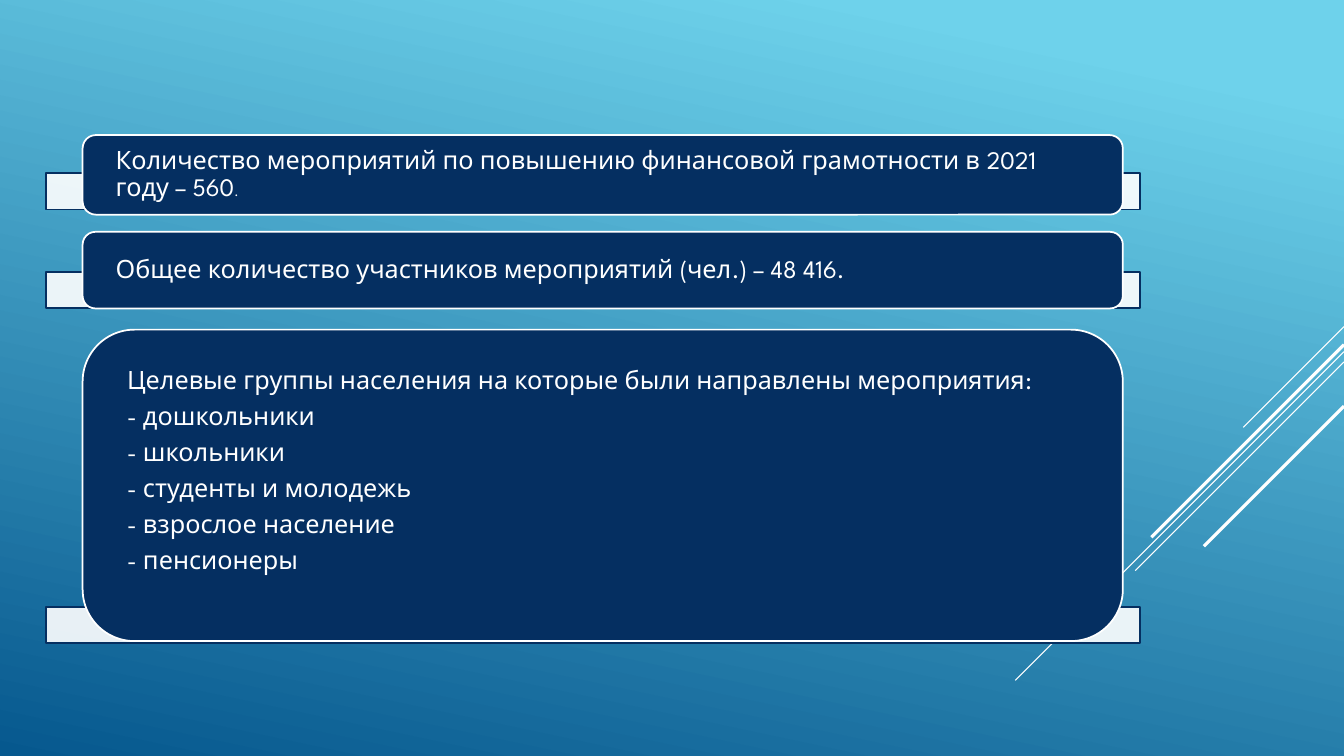
from dataclasses import dataclass

from lxml.etree import SubElement
from pptx import Presentation
from pptx.dml.color import RGBColor
from pptx.enum.shapes import MSO_CONNECTOR, MSO_SHAPE
from pptx.enum.text import MSO_ANCHOR, PP_ALIGN
from pptx.oxml.ns import qn
from pptx.util import Inches, Pt

WIDTH, HEIGHT = Inches(13.33), Inches(7.5)
COLUMN, ROW = WIDTH / 100, HEIGHT / 100


@dataclass(frozen=True)
class Theme:
    navy: RGBColor = RGBColor.from_string("052F61")
    white: RGBColor = RGBColor.from_string("FFFFFF")
    sky: RGBColor = RGBColor.from_string("6ED2EB")
    ocean: RGBColor = RGBColor.from_string("06588E")
    font: str = "League Spartan"
    body: float = 18
    small: float = 10
    outline: float = 1.25
    thin: float = 0.75
    thick: float = 2.25


@dataclass(frozen=True)
class Box:
    """An area in columns and rows of the 100 by 100 slide grid."""
    left: float
    top: float
    width: float
    height: float

    def inner(self, left, top, width, height):
        return Box(self.left + left, self.top + top, width, height)

    def lengths(self):
        return (round(self.left * COLUMN), round(self.top * ROW),
                round(self.width * COLUMN), round(self.height * ROW))


THEME = Theme()
SLIDE_BOX = Box(0, 0, 100, 100)
LIST_BOX = Box(3.45, 17.87, 81.4, 67.2)

# Card top, card height, bar top, bottom inset in rows, then paragraphs of (text, size) runs
CARDS = [
    (0, 10.53, 5.06, 0, [
        [("Количество мероприятий по повышению финансовой грамотности в 2021 году – 560",
          THEME.body), (".", THEME.small)]]),
    (12.8, 10.13, 18.13, 0, [
        [("Общее количество участников мероприятий (чел.) – 48 416.", THEME.body)]]),
    (25.73, 41.2, 62.4, 3.7, [
        [(line, THEME.body)] for line in (
            "Целевые группы населения на которые были направлены мероприятия:",
            "- дошкольники",
            "- школьники",
            "- студенты и молодежь",
            "- взрослое население",
            "- пенсионеры")]),
]

# Start row on the right edge, run in inches, line width
DIAGONALS = [
    (43.2, 1.0, THEME.thin),
    (46.53, 3.26, THEME.thin),
    (47.87, 2.07, THEME.thin),
    (45.6, 1.91, THEME.thick),
    (53.73, 1.39, THEME.thick),
]


def add_run(paragraph, text, *, size, color=THEME.white, font=THEME.font):
    run = paragraph.add_run()
    run.text = text
    run.font.size = Pt(size)
    run.font.name = font
    run.font.color.rgb = color


def add_panel(slide, kind, box, *, fill, line):
    shape = slide.shapes.add_shape(kind, *box.lengths())
    shape.shadow.inherit = False
    shape.fill.solid()
    shape.fill.fore_color.rgb = fill
    shape.line.color.rgb = line
    shape.line.width = Pt(THEME.outline)
    return shape


def add_bar(slide, box):
    bar = add_panel(slide, MSO_SHAPE.RECTANGLE, box, fill=THEME.white, line=THEME.navy)
    color = bar.fill._xPr.find(qn("a:solidFill"))[0]
    SubElement(color, qn("a:alpha"), val="90000")


def add_card(slide, box, paragraphs, bottom_inset):
    card = add_panel(slide, MSO_SHAPE.ROUNDED_RECTANGLE, box,
                     fill=THEME.navy, line=THEME.white)
    frame = card.text_frame
    frame.word_wrap = True
    frame.vertical_anchor = MSO_ANCHOR.MIDDLE
    frame.margin_left = frame.margin_right = Inches(0.29)
    frame.margin_top = 0
    frame.margin_bottom = round(bottom_inset * ROW)
    for index, runs in enumerate(paragraphs):
        paragraph = frame.add_paragraph() if index else frame.paragraphs[0]
        paragraph.alignment = PP_ALIGN.LEFT
        paragraph.line_spacing = 0.9
        paragraph.space_after = Pt(THEME.body * 0.35)
        for text, size in runs:
            add_run(paragraph, text, size=size)


def add_card_list(slide, box):
    for top, height, bar_top, bottom_inset, paragraphs in CARDS:
        add_bar(slide, box.inner(0, bar_top, box.width, 4.8))
        add_card(slide, box.inner(2.7, top, 77.4, height), paragraphs, bottom_inset)


def add_diagonals(slide, box):
    """Draw 45 degree lines falling leftwards from the right edge of the box."""
    left, top, width, _ = box.lengths()
    right = left + width
    for start_row, run, line_width in DIAGONALS:
        start, length = top + round(start_row * ROW), Inches(run)
        line = slide.shapes.add_connector(
            MSO_CONNECTOR.STRAIGHT, right, start, right - length, start + length)
        line.line.color.rgb = THEME.white
        line.line.width = Pt(line_width)
        SubElement(line._element.spPr, qn("a:effectLst"))


def paint_background(slide):
    fill = slide.background.fill
    fill.gradient()
    fill.gradient_angle = 360 - 102
    stops = ((0.1, THEME.sky), (1, THEME.ocean))
    for stop, (position, color) in zip(fill.gradient_stops, stops):
        stop.position = position
        stop.color.rgb = color


def main():
    presentation = Presentation()
    presentation.slide_width, presentation.slide_height = WIDTH, HEIGHT
    slide = presentation.slides.add_slide(presentation.slide_layouts[6])
    paint_background(slide)
    add_diagonals(slide, SLIDE_BOX)
    add_card_list(slide, LIST_BOX)
    presentation.save("out.pptx")


if __name__ == "__main__":
    main()
